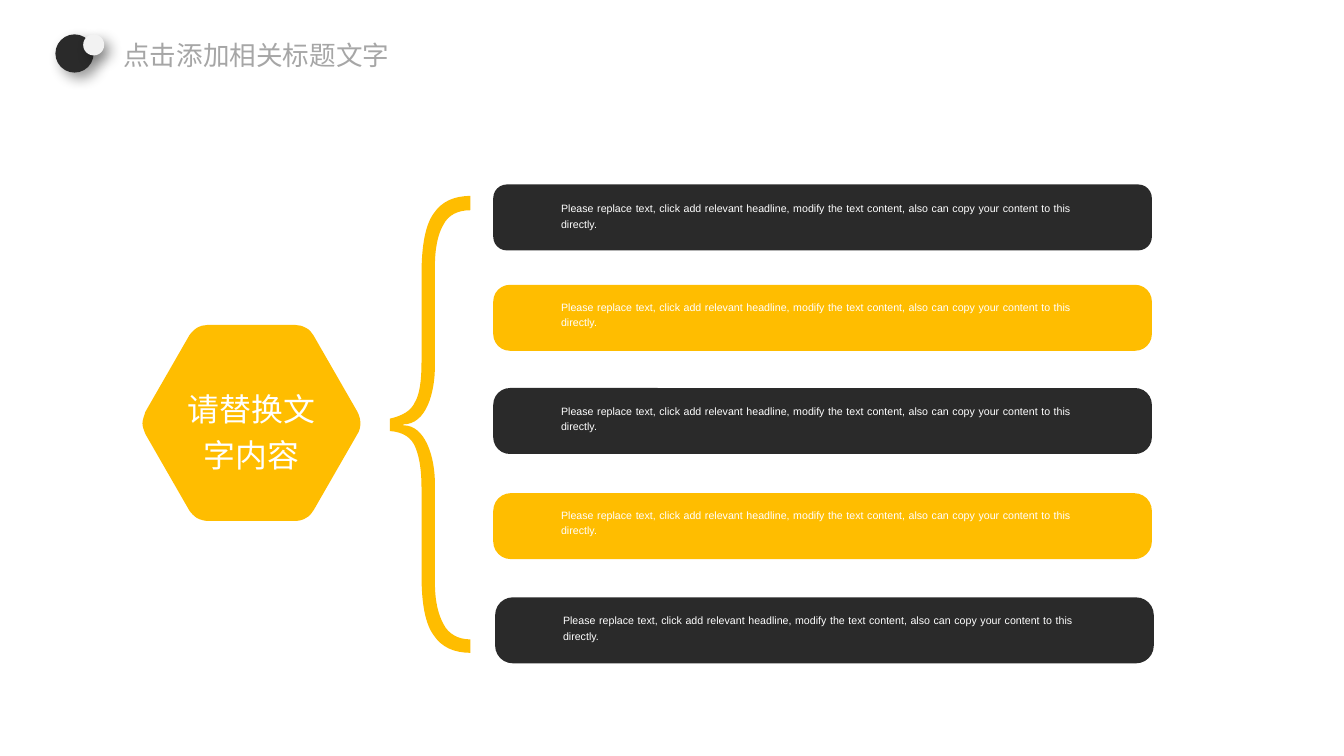
from lxml.etree import Element, SubElement
from pptx import Presentation
from pptx.dml.color import RGBColor
from pptx.enum.shapes import MSO_SHAPE
from pptx.enum.text import MSO_ANCHOR, MSO_AUTO_SIZE, PP_ALIGN
from pptx.oxml.ns import qn
from pptx.util import Inches, Pt

COLORS = {"gold": "FFBD00", "dark": "2A2A2A", "pale": "F2F2F2",
          "gray": "A6A6A6", "white": "FFFFFF", "black": "000000"}
HINT = ("Please replace text, click add relevant headline, modify the text "
        "content, also can copy your content to this directly.")

deck = Presentation()
deck.slide_width, deck.slide_height = Inches(14.06), Inches(7.91)
slide = deck.slides.add_slide(deck.slide_layouts[5])
shapes = slide.shapes


def paint(shape, color):
    shape.shadow.inherit = False
    shape.fill.solid()
    shape.fill.fore_color.rgb = RGBColor.from_string(COLORS[color])
    shape.line.fill.background()


def write(box, text, size, color, margins, style):
    frame = box.text_frame
    frame.text = text
    frame.word_wrap = True
    frame.vertical_anchor = MSO_ANCHOR.TOP
    frame.margin_left = frame.margin_right = Inches(margins[0])
    frame.margin_top = frame.margin_bottom = Inches(margins[1])
    para = frame.paragraphs[0]
    for name, value in style.items():
        setattr(para, name, value)
    font = para.runs[0].font
    for name, value in {"name": "Arial", "size": Pt(size)}.items():
        setattr(font, name, value)
    font.color.rgb = RGBColor.from_string(COLORS[color])
    return frame


# Hexagon and brace: two numbers make a line, six make a curve
hexagon = [
    (3.28, 5.34), (3.26, 5.37, 3.24, 5.4, 3.2, 5.42),
    (3.17, 5.44, 3.13, 5.45, 3.09, 5.45), (2.17, 5.45),
    (2.14, 5.45, 2.1, 5.44, 2.06, 5.42), (2.03, 5.4, 2, 5.37, 1.98, 5.34),
    (1.52, 4.54), (1.51, 4.51, 1.49, 4.47, 1.49, 4.43),
    (1.49, 4.39, 1.51, 4.35, 1.52, 4.31), (1.98, 3.51),
    (2, 3.48, 2.03, 3.45, 2.06, 3.43), (2.1, 3.41, 2.13, 3.4, 2.17, 3.4),
    (3.09, 3.4), (3.13, 3.4, 3.16, 3.41, 3.2, 3.43),
    (3.24, 3.45, 3.26, 3.48, 3.28, 3.51), (3.74, 4.31),
    (3.76, 4.35, 3.77, 4.39, 3.77, 4.43), (3.77, 4.47, 3.76, 4.51, 3.74, 4.54),
    (3.28, 5.34)]
brace = [
    (4.55, 5.06), (4.55, 6.09), (4.55, 6.28, 4.58, 6.42, 4.64, 6.53),
    (4.69, 6.63, 4.79, 6.69, 4.92, 6.69), (4.92, 6.83),
    (4.75, 6.83, 4.62, 6.77, 4.54, 6.65), (4.45, 6.53, 4.41, 6.32, 4.41, 6.01),
    (4.41, 5.1), (4.41, 4.93, 4.39, 4.79, 4.35, 4.69),
    (4.31, 4.58, 4.22, 4.52, 4.08, 4.51), (4.08, 4.38),
    (4.21, 4.35, 4.3, 4.3, 4.34, 4.21), (4.39, 4.13, 4.41, 3.98, 4.41, 3.79),
    (4.41, 2.88), (4.41, 2.57, 4.45, 2.35, 4.54, 2.23),
    (4.62, 2.11, 4.75, 2.05, 4.92, 2.05), (4.92, 2.2),
    (4.79, 2.2, 4.69, 2.25, 4.64, 2.35), (4.58, 2.45, 4.55, 2.6, 4.55, 2.79),
    (4.55, 3.83), (4.55, 4.11, 4.46, 4.44, 4.22, 4.44), (4.22, 4.45),
    (4.45, 4.45, 4.55, 4.78, 4.55, 5.06)]
for outline in (hexagon, brace):
    ends = [(Inches(part[-2]), Inches(part[-1])) for part in outline]
    pen = shapes.build_freeform(*ends[0])
    pen.add_line_segments(ends[1:], close=True)
    form = pen.convert_to_shape()
    paint(form, "gold")
    # Bend the six-number parts by adding their two control points
    nodes = list(form.element.iter(qn("a:lnTo")))
    for node, part in zip(nodes, outline[1:]):
        if len(part) == 6:
            node.tag = qn("a:cubicBezTo")
            for spot in (0, 1):
                x, y = part[2 * spot:2 * spot + 2]
                node.insert(spot, Element(qn("a:pt"), x=str(Inches(x) - form.left),
                                          y=str(Inches(y) - form.top)))

# Hexagon label
label = shapes.add_textbox(Inches(1.93), Inches(4), Inches(1.4), Inches(0.93))
frame = write(label, "请替换文字内容", 24, "white", (0, 0),
              {"alignment": PP_ALIGN.CENTER, "line_spacing": 1.2})
frame.auto_size = MSO_AUTO_SIZE.SHAPE_TO_FIT_TEXT

# Bars with their text: left, top, text top, corner, colour
bars = [(5.16, 1.93, 2.09, 0.206, "dark"), (5.16, 2.98, 3.12, 0.253, "gold"),
        (5.16, 4.06, 4.21, 0.253, "dark"), (5.16, 5.16, 5.3, 0.268, "gold"),
        (5.18, 6.25, 6.4, 0.268, "dark")]
for left, top, line, corner, color in bars:
    bar = shapes.add_shape(MSO_SHAPE.ROUNDED_RECTANGLE, Inches(left), Inches(top),
                           Inches(6.89), Inches(0.69))
    bar.adjustments[0] = corner
    paint(bar, color)
    note = shapes.add_textbox(Inches(left + 0.71), Inches(line),
                              Inches(5.34), Inches(0.31))
    frame = write(note, HINT, 8, "white", (0, 0),
                  {"alignment": PP_ALIGN.JUSTIFY, "line_spacing": 1.2})
    frame.auto_size = MSO_AUTO_SIZE.SHAPE_TO_FIT_TEXT

# Title
title = shapes.title
box = {"left": 1.18, "top": 0.36, "width": 3.35, "height": 0.4}
for name, value in box.items():
    setattr(title, name, Inches(value))
frame = write(title, "点击添加相关标题文字", 20, "gray", (0.11, 0.05),
              {"alignment": PP_ALIGN.LEFT, "space_after": Pt(6)})
frame.auto_size = MSO_AUTO_SIZE.NONE

# Shadowed dots beside the title
for left, size, color in [(0.58, 0.4, "dark"), (0.87, 0.22, "pale")]:
    dot = shapes.add_shape(MSO_SHAPE.OVAL, Inches(left), Inches(0.36),
                           Inches(size), Inches(size))
    paint(dot, color)
    effects = dot.element.spPr.find(qn("a:effectLst"))
    shade = SubElement(effects, qn("a:outerShdw"), blurRad=str(Pt(10)),
                       dist=str(Pt(6)), dir=str(45 * 60000), algn="tl",
                       rotWithShape="0")
    tint = SubElement(shade, qn("a:srgbClr"), val=COLORS["black"])
    SubElement(tint, qn("a:alpha"), val="40000")

deck.save("out.pptx")
